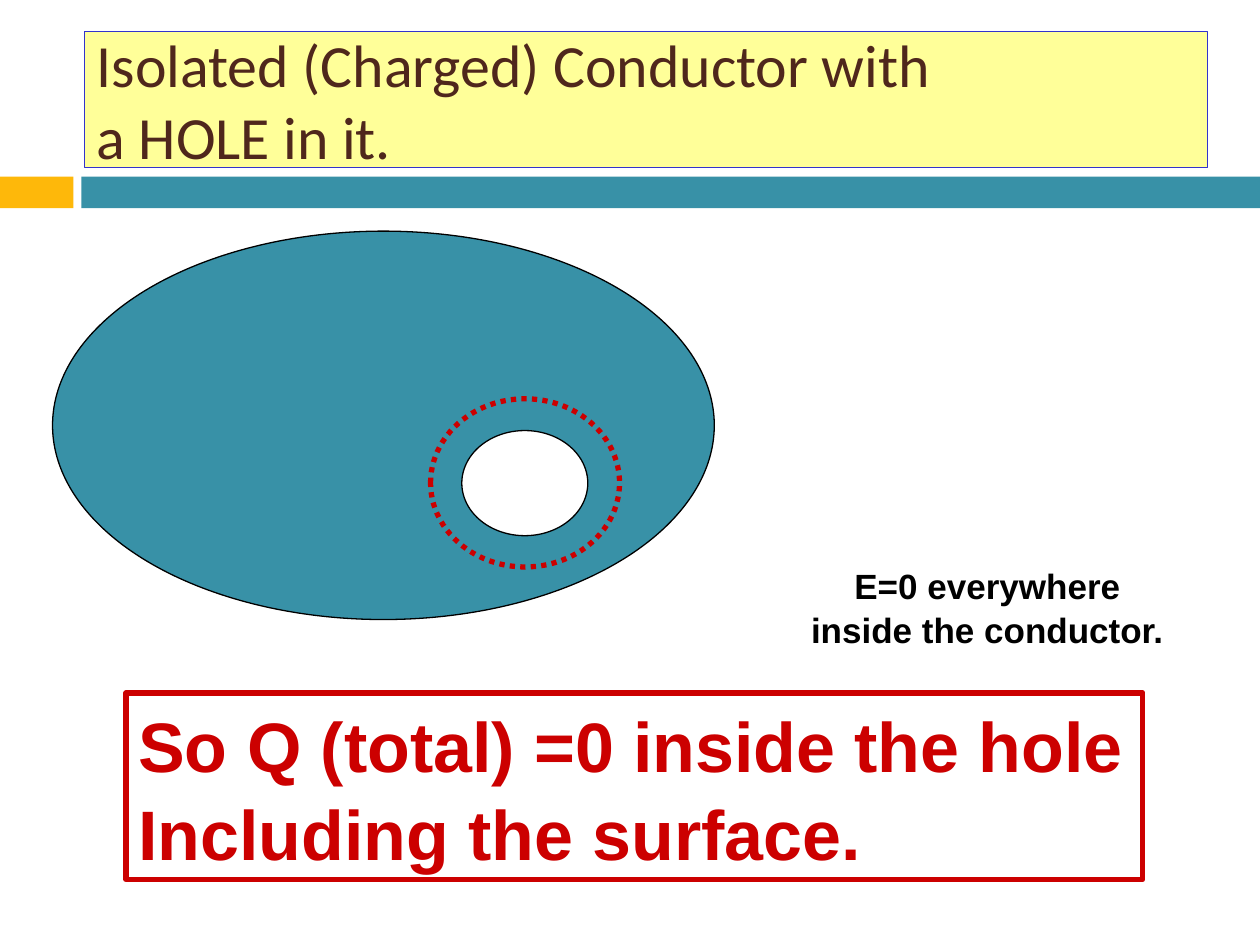
from dataclasses import dataclass, field

from pptx import Presentation
from pptx.dml.color import RGBColor
from pptx.enum.dml import MSO_LINE
from pptx.enum.shapes import MSO_SHAPE
from pptx.enum.text import MSO_ANCHOR, PP_ALIGN
from pptx.util import Cm, Pt

COLORS = {
    "teal": "3891A7",
    "gold": "FEB80A",
    "yellow": "FFFF99",
    "blue": "3333CC",
    "brown": "4F271C",
    "red": "CC0000",
    "black": "000000",
    "white": "FFFFFF",
}


def color(name):
    return RGBColor.from_string(COLORS[name])


def write(box, text, size, ink, font="Arial", bold=True, align=PP_ALIGN.LEFT, spacing=1.05, wrap=False):
    frame = box.text_frame
    frame.word_wrap = wrap
    frame.vertical_anchor = MSO_ANCHOR.MIDDLE
    frame.text = text
    for para in frame.paragraphs:
        para.alignment = align
        para.line_spacing = spacing
        for span in para.runs:
            span.font.name = font
            span.font.size = Pt(size)
            span.font.bold = bold
            span.font.color.rgb = color(ink)


@dataclass
class Painter:
    """Draws elements on the current page in the deck's style."""

    page: object
    thin: float = 0.75
    thick: float = 3
    palette: dict = field(default_factory=lambda: COLORS)

    def shape(self, kind, place, fill=None, line=None, width=None, dash=None):
        box = self.page.shapes.add_shape(kind, *map(Cm, place))
        box.shadow.inherit = False
        if fill:
            box.fill.solid()
            box.fill.fore_color.rgb = color(fill)
        else:
            box.fill.background()
        if line:
            box.line.color.rgb = color(line)
            box.line.width = Pt(width or self.thin)
            if dash:
                box.line.dash_style = dash
        else:
            box.line.fill.background()
        return box

    def rectangle(self, *place, **style):
        return self.shape(MSO_SHAPE.RECTANGLE, place, **style)

    def ellipse(self, *place, **style):
        return self.shape(MSO_SHAPE.OVAL, place, **style)

    def label(self, *place):
        return self.page.shapes.add_textbox(*map(Cm, place))


def main():
    deck = Presentation()
    deck.slide_width, deck.slide_height = Cm(25.4), Cm(19.05)
    painter = Painter(deck.slides.add_slide(deck.slide_layouts[6]))

    painter.rectangle(0, 3.56, 1.48, 0.64, fill="gold")
    painter.rectangle(1.64, 3.56, 23.76, 0.64, fill="teal")
    title = painter.rectangle(1.7, 0.63, 22.65, 2.75, fill="yellow", line="blue")
    write(title, "Isolated (Charged) Conductor with\va HOLE in it.", 34.2, "brown",
          font="Calibri", bold=False, spacing=1, wrap=True)

    painter.ellipse(1.06, 4.66, 13.34, 7.83, fill="teal", line="black")
    painter.ellipse(8.68, 8.04, 3.81, 3.39, fill="teal", line="red",
                    width=painter.thick, dash=MSO_LINE.ROUND_DOT)
    painter.ellipse(9.31, 8.68, 2.54, 2.12, fill="white", line="black")

    field_note = painter.label(16.07, 11.25, 7.67, 1.96)
    write(field_note, "E=0 everywhere\ninside the conductor.", 20, "black", align=PP_ALIGN.CENTER)

    conclusion = painter.rectangle(2.54, 13.97, 20.5, 3.76, line="red", width=painter.thick)
    write(conclusion, "So Q (total) =0 inside the hole\nIncluding the surface.", 40, "red")

    deck.save("out.pptx")


if __name__ == "__main__":
    main()
